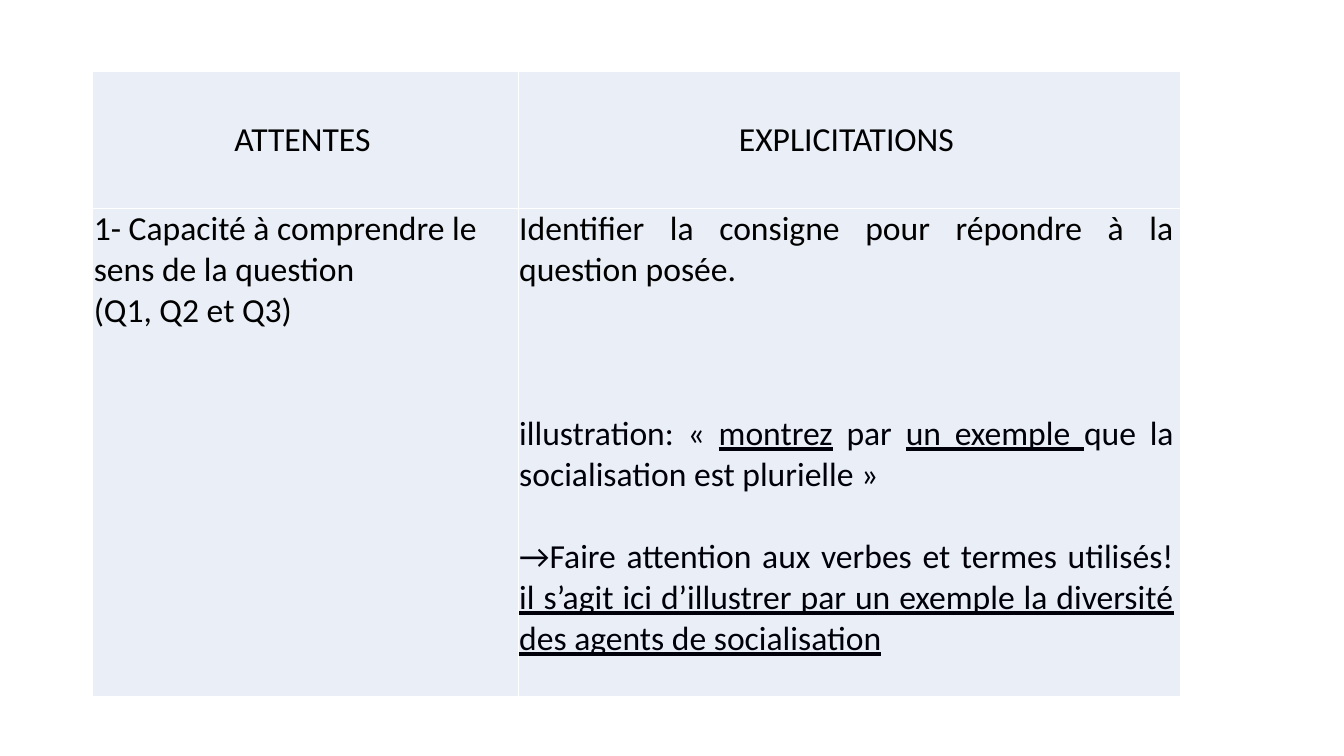
from lxml import etree
from pptx import Presentation
from pptx.dml.color import RGBColor
from pptx.enum.text import MSO_ANCHOR, PP_ALIGN
from pptx.oxml.ns import qn
from pptx.util import Inches, Pt

LEFT, CENTER, JUSTIFY = PP_ALIGN.LEFT, PP_ALIGN.CENTER, PP_ALIGN.JUSTIFY
TOP, MIDDLE = MSO_ANCHOR.TOP, MSO_ANCHOR.MIDDLE
COLORS = {"fill": "EAEFF7", "border": "FFFFFF", "text": "000000", "ink": "00000A"}
FONT = {"name": "Calibri", "size": Pt(24), "bold": False}
MARGINS = {"margin_left": Inches(0.01), "margin_top": 0,
           "margin_right": Inches(0.07), "margin_bottom": 0}
LINE = 29.3
COLUMNS = [4.22, 6.57]
ROWS = [1.36, 4.84]
ORIGIN = (0.92, 0.71)

# Each paragraph: blank lines of space above, colour, [(text, underlined)]
HEADINGS = ["ATTENTES", "EXPLICITATIONS"]
EXPECTATION = [
    (0, "text", [("1- Capacité à comprendre le sens de la question", False)]),
    (0, "text", [("(Q1, Q2 et Q3)", False)]),
]
EXPLANATION = [
    (0, "text", [("Identifier la consigne pour répondre à la question posée.", False)]),
    (3, "ink", [("illustration: « ", False), ("montrez", True), (" par ", False),
                ("un exemple ", True), ("que la socialisation est plurielle »", False)]),
    (1, "ink", [("→Faire attention aux verbes et termes utilisés! ", False),
                ("il s’agit ici d’illustrer par un exemple la diversité "
                 "des agents de socialisation", True)]),
]


def set_values(target, values):
    """Set each named attribute of the target."""
    for name, value in values.items():
        setattr(target, name, value)


def add_borders(cell):
    """Draw a thin line along the four sides of a cell."""
    properties = cell._tc.get_or_add_tcPr()
    for index, side in enumerate(("a:lnL", "a:lnR", "a:lnT", "a:lnB")):
        line = etree.Element(qn(side), w=str(Pt(1)))
        fill = etree.SubElement(line, qn("a:solidFill"))
        etree.SubElement(fill, qn("a:srgbClr"), val=COLORS["border"])
        properties.insert(index, line)


def write_cell(cell, paragraphs, align, anchor):
    """Format a cell and write its paragraphs."""
    set_values(cell, {**MARGINS, "vertical_anchor": anchor})
    cell.fill.solid()
    cell.fill.fore_color.rgb = RGBColor.from_string(COLORS["fill"])
    add_borders(cell)
    frame = cell.text_frame
    for index, (gap, color, spans) in enumerate(paragraphs):
        para = frame.add_paragraph() if index else frame.paragraphs[0]
        set_values(para, {"alignment": align, "space_before": Pt(gap * LINE)})
        for text, underlined in spans:
            span = para.add_run()
            span.text = text
            set_values(span.font, {**FONT, "underline": underlined})
            span.font.color.rgb = RGBColor.from_string(COLORS[color])


def add_grid(page):
    """Add the empty table with its column widths and row heights."""
    box = [Inches(value) for value in (*ORIGIN, sum(COLUMNS), sum(ROWS))]
    table = page.shapes.add_table(len(ROWS), len(COLUMNS), *box).table
    set_values(table, {"first_row": False, "horz_banding": False})
    for column, width in zip(table.columns, COLUMNS):
        column.width = Inches(width)
    for row, height in zip(table.rows, ROWS):
        row.height = Inches(height)
    return table


def main():
    """Build the slide and save the deck."""
    deck = Presentation()
    set_values(deck, {"slide_width": Inches(13.33), "slide_height": Inches(7.5)})
    page = deck.slides.add_slide(deck.slide_layouts[6])
    table = add_grid(page)
    for column, heading in enumerate(HEADINGS):
        write_cell(table.cell(0, column), [(0, "text", [(heading, False)])], CENTER, MIDDLE)
    write_cell(table.cell(1, 0), EXPECTATION, LEFT, TOP)
    write_cell(table.cell(1, 1), EXPLANATION, JUSTIFY, TOP)
    deck.save("out.pptx")


if __name__ == "__main__":
    main()
